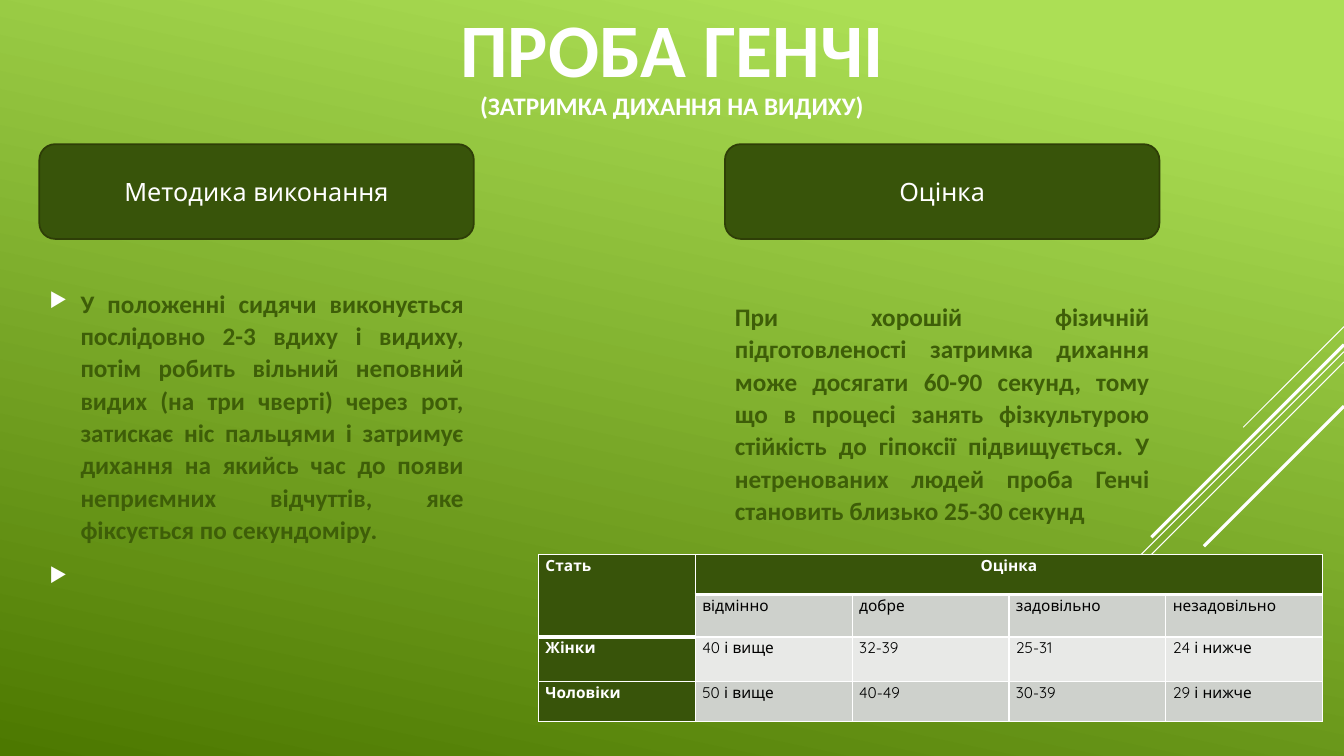
from dataclasses import dataclass

from lxml import etree
from pptx import Presentation
from pptx.dml.color import RGBColor
from pptx.enum.shapes import MSO_CONNECTOR, MSO_SHAPE
from pptx.enum.text import MSO_ANCHOR as Anchor, PP_ALIGN as Align
from pptx.oxml import parse_xml
from pptx.oxml.ns import nsdecls, qn
from pptx.slide import Slide
from pptx.util import Inches, Pt

COLORS = {
    "white": "FFFFFF", "black": "000000", "light": "ACDF55", "deep": "4C7800",
    "panel": "38540A", "edge": "2E3E07", "text": "3E5E08",
    "band": "CED1CC", "pale": "E8E9E7",
}
WIDTH, HEIGHT = Inches(13.33), Inches(7.5)
LEFT, RIGHT, COLUMN = 2.93, 53.94, 32.33
HEADING_TOP, HEADING_HEIGHT, BODY_HEIGHT = 19.07, 12.53, 52.67
ROW_HEIGHTS = [5.33, 5.6, 5.87, 5.33]
ROWS = [
    ["Стать", "Оцінка", "", "", ""],
    ["", "відмінно", "добре", "задовільно", "незадовільно"],
    ["Жінки", "40 і вище", "32-39", "25-31", "24 і нижче"],
    ["Чоловіки", "50 і вище", "40-49", "30-39", "29 і нижче"],
]


@dataclass(frozen=True)
class Ray:
    """A diagonal from the right edge; top and drop are percent of slide height."""
    top: float
    drop: float
    weight: float


@dataclass(frozen=True)
class Column:
    """A heading with the text under it; left and top are percent of the slide."""
    left: float
    top: float
    heading: str
    paragraphs: tuple[str, ...]
    bulleted: bool


RAYS = [
    Ray(43.2, 13.33, 0.75), Ray(46.53, 43.47, 0.75), Ray(47.87, 27.67, 0.75),
    Ray(45.6, 25.47, 2.25), Ray(53.73, 18.53, 2.25),
]
COLUMNS = [
    Column(LEFT, 34.8, "Методика виконання", (
        "У положенні сидячи виконується послідовно 2-3 вдиху і видиху, потім "
        "робить вільний неповний видих (на три чверті) через рот, затискає ніс "
        "пальцями і затримує дихання на якийсь час до появи неприємних "
        "відчуттів, яке фіксується по секундоміру.", " "), True),
    Column(RIGHT, 31.2, "Оцінка", (
        "При хорошій фізичній підготовленості затримка дихання може досягати "
        "60-90 секунд, тому що в процесі занять фізкультурою стійкість до "
        "гіпоксії підвищується. У нетренованих людей проба Генчі становить "
        "близько 25-30 секунд",), False),
]


def x(share: float) -> int:
    """Turn a percent of the slide width into a length."""
    return round(WIDTH * share / 100)


def y(share: float) -> int:
    """Turn a percent of the slide height into a length."""
    return round(HEIGHT * share / 100)


def rgb(name: str) -> RGBColor:
    """Look up a named colour."""
    return RGBColor.from_string(COLORS[name])


def style(p, size: float, font: str, color: str, bold: bool, align: Align) -> None:
    """Format a paragraph and its runs."""
    p.alignment = align
    for r in p.runs:
        r.font.size, r.font.name, r.font.bold = Pt(size), font, bold
        r.font.color.rgb = rgb(color)


def space(p, before: float) -> None:
    """Set the spacing shared by body and table text."""
    p.line_spacing, p.space_before, p.space_after = 1.07, Pt(before), Pt(8)


def add_bullet(p) -> None:
    """Give a paragraph a white triangle bullet with a hanging indent."""
    pPr = p._p.get_or_add_pPr()
    pPr.set("marL", str(Inches(0.31)))
    pPr.set("indent", str(-Inches(0.31)))
    clr = etree.SubElement(pPr, qn("a:buClr"))
    etree.SubElement(clr, qn("a:srgbClr"), val=COLORS["white"])
    etree.SubElement(pPr, qn("a:buSzPct"), val="80000")
    etree.SubElement(pPr, qn("a:buChar"), char="▶")


def paint_background(s: Slide) -> None:
    """Fill the slide with the green gradient."""
    fill = s.background.fill
    fill.gradient()
    fill.gradient_angle = 258
    for stop, (color, position) in zip(fill.gradient_stops, [("light", 0.1), ("deep", 1)]):
        stop.color.rgb, stop.position = rgb(color), position


def add_ray(s: Slide, ray: Ray) -> None:
    """Draw one 45-degree line down from the right edge."""
    drop = y(ray.drop)
    sp = s.shapes.add_connector(MSO_CONNECTOR.STRAIGHT, WIDTH, y(ray.top),
                                WIDTH - drop, y(ray.top) + drop)
    sp.line.color.rgb, sp.line.width = rgb("white"), Pt(ray.weight)
    etree.SubElement(sp._element.spPr, qn("a:effectLst"))


def add_title(s: Slide) -> None:
    """Add the title and the line below it."""
    tf = s.shapes.add_textbox(x(15), y(1.6), x(70), y(15)).text_frame
    tf.word_wrap, tf.margin_top = True, 0
    tf.text = "ПРОБА ГЕНЧІ\n(ЗАТРИМКА ДИХАННЯ НА ВИДИХУ)"
    for p, size in zip(tf.paragraphs, [54, 18]):
        p.line_spacing = 0.9
        style(p, size, "Calibri", "white", True, Align.CENTER)


def add_column(s: Slide, column: Column) -> None:
    """Add a rounded heading and its body text."""
    sp = s.shapes.add_shape(MSO_SHAPE.ROUNDED_RECTANGLE, x(column.left), y(HEADING_TOP),
                            x(COLUMN), y(HEADING_HEIGHT))
    sp.shadow.inherit = False
    sp.fill.solid()
    sp.fill.fore_color.rgb = rgb("panel")
    sp.line.color.rgb, sp.line.width = rgb("edge"), Pt(1.25)
    tf = sp.text_frame
    tf.text, tf.vertical_anchor = column.heading, Anchor.MIDDLE
    style(tf.paragraphs[0], 18, "Quicksand", "white", False, Align.CENTER)

    tf = s.shapes.add_textbox(x(column.left), y(column.top), x(COLUMN),
                              y(BODY_HEIGHT)).text_frame
    tf.word_wrap, tf.vertical_anchor, tf.margin_bottom = True, Anchor.MIDDLE, Inches(0.5)
    tf.text = "\n".join(column.paragraphs)
    for p in tf.paragraphs:
        style(p, 18, "Calibri", "text", True, Align.JUSTIFY)
        space(p, 3.6)
        if column.bulleted:
            add_bullet(p)


def rule(row: int, col: int) -> int:
    """Give the weight of the border above a cell."""
    return 3 if row == 1 or (row == 2 and col == 0) else 1


def add_borders(cell, row: int, col: int) -> None:
    """Draw white borders around a cell."""
    tcPr = cell._tc.get_or_add_tcPr()
    weights = {"lnL": 1, "lnR": 1, "lnT": rule(row, col), "lnB": rule(row + 1, col)}
    for i, (side, weight) in enumerate(weights.items()):
        tcPr.insert(i, parse_xml(
            f'<a:{side} {nsdecls("a")} w="{Pt(weight)}"><a:solidFill>'
            f'<a:srgbClr val="{COLORS["white"]}"/></a:solidFill></a:{side}>'))


def add_scores(s: Slide) -> None:
    """Add the table of scores."""
    table = s.shapes.add_table(len(ROWS), len(ROWS[0]), x(40.06), y(73.33), x(58.35),
                               y(sum(ROW_HEIGHTS))).table
    table.first_row = table.horz_banding = False
    for i, (height, texts) in enumerate(zip(ROW_HEIGHTS, ROWS)):
        table.rows[i].height = y(height)
        for j, text in enumerate(texts):
            cell, header = table.cell(i, j), i == 0 or j == 0
            cell.text = text
            cell.margin_left = cell.margin_right = Inches(0.07)
            cell.margin_top = cell.margin_bottom = 0
            cell.fill.solid()
            cell.fill.fore_color.rgb = rgb("panel" if header else "band" if i % 2 else "pale")
            add_borders(cell, i, j)
            p = cell.text_frame.paragraphs[0]
            style(p, 11, "Quicksand", "white" if header else "black", header,
                  Align.CENTER if i == 0 and j else Align.LEFT)
            space(p, 0)
    table.cell(0, 0).merge(table.cell(1, 0))
    table.cell(0, 1).merge(table.cell(0, 4))


def main() -> None:
    """Build the slide and save it."""
    prs = Presentation()
    prs.slide_width, prs.slide_height = WIDTH, HEIGHT
    s = prs.slides.add_slide(prs.slide_layouts[6])
    paint_background(s)
    for ray in RAYS:
        add_ray(s, ray)
    add_title(s)
    for column in COLUMNS:
        add_column(s, column)
    add_scores(s)
    prs.save("out.pptx")


if __name__ == "__main__":
    main()
